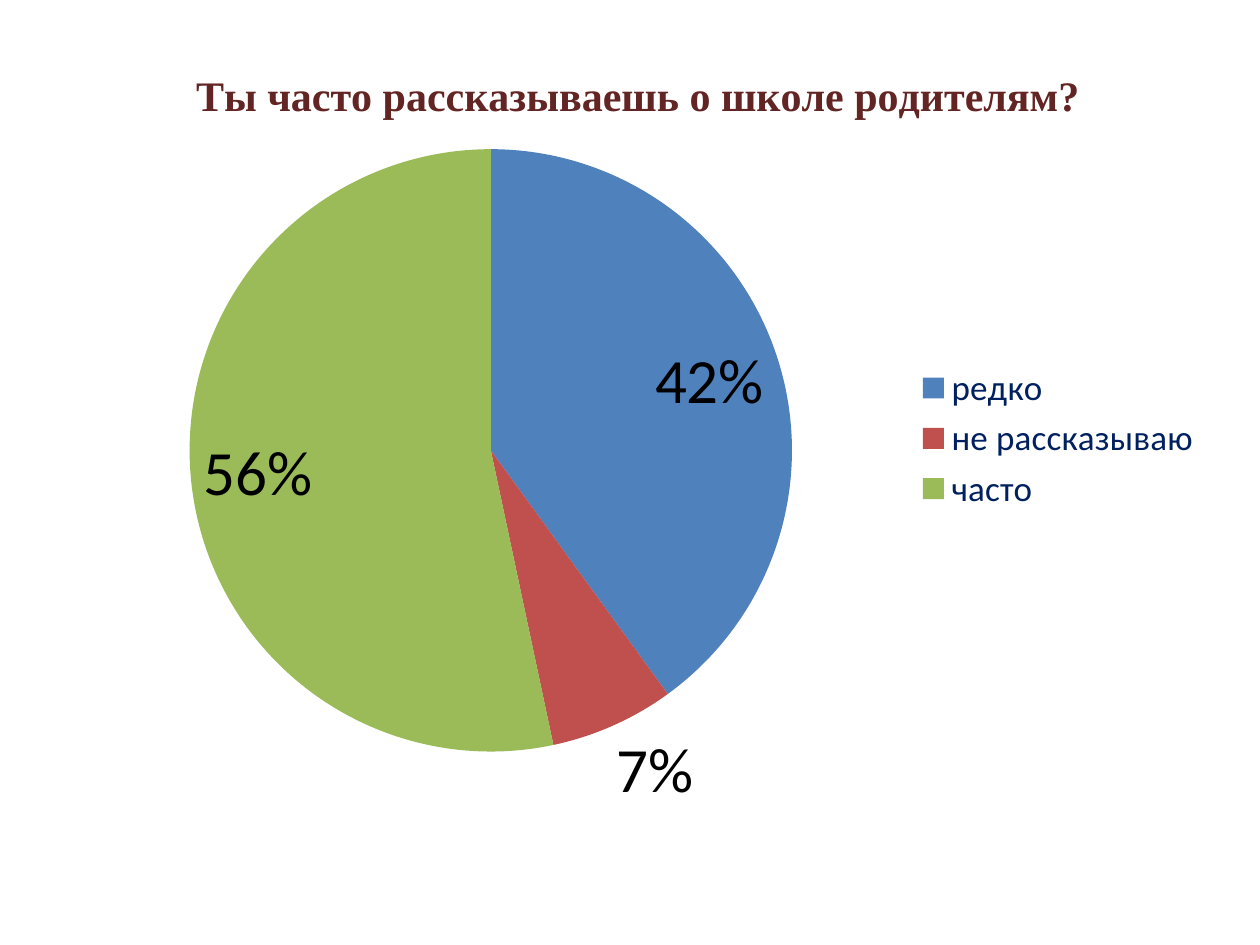
from lxml import etree
from pptx import Presentation
from pptx.chart.data import CategoryChartData
from pptx.dml.color import RGBColor
from pptx.enum.chart import XL_CHART_TYPE, XL_LABEL_POSITION, XL_LEGEND_POSITION
from pptx.oxml.ns import qn
from pptx.util import Pt

PIE = XL_CHART_TYPE.PIE
BEST_FIT = XL_LABEL_POSITION.BEST_FIT
RIGHT = XL_LEGEND_POSITION.RIGHT

TITLE = "Ты часто рассказываешь о школе родителям?"
# answer: (share, slice colour)
ANSWERS = {
    "редко": (0.42, "4F81BD"),
    "не рассказываю": (0.07, "C0504D"),
    "часто": (0.56, "9BBB59"),
}


def color(hex_str):
    return RGBColor.from_string(hex_str)


def format_font(font, hex_str, **values):
    font.color.rgb = color(hex_str)
    for name, value in values.items():
        setattr(font, name, value)


def set_layout(element, index, **values):
    """Place a chart part by fractions of the chart box."""
    old = element.find(qn("c:layout"))
    if old is not None:
        element.remove(old)
    layout = etree.Element(qn("c:layout"))
    element.insert(index, layout)
    manual = etree.SubElement(layout, qn("c:manualLayout"))
    for name, value in values.items():
        etree.SubElement(manual, qn(f"c:{name}")).set("val", str(value))


def add_answer_pie(slide, left, top, width, height):
    data = CategoryChartData(number_format="0%")
    data.categories = list(ANSWERS)
    data.add_series("Ответы", [share for share, _ in ANSWERS.values()])
    box = [Pt(v) for v in (left, top, width, height)]
    chart = slide.shapes.add_chart(PIE, *box, data).chart
    format_font(chart.font, "000000", name="Calibri", size=Pt(18))

    # Title
    chart.has_title = True
    tf = chart.chart_title.text_frame
    tf.text = TITLE
    format_font(tf.paragraphs[0].runs[0].font, "632523",
                name="Times New Roman", size=Pt(24), bold=True)
    # The layout follows the title text
    set_layout(chart.chart_title._element, 1,
               xMode="edge", yMode="edge", x=0.1, y=0.03)

    # Legend
    chart.has_legend = True
    chart.legend.position = RIGHT
    chart.legend.include_in_layout = False
    format_font(chart.legend.font, "002060", name="Calibri", size=Pt(20))

    # Slices
    plot = chart.plots[0]
    plot.vary_by_categories = True
    for i, (_, hex_str) in enumerate(ANSWERS.values()):
        fill = plot.series[0].points[i].format.fill
        fill.solid()
        fill.fore_color.rgb = color(hex_str)

    # Value labels
    plot.has_data_labels = True
    labels = plot.data_labels
    formats = {"show_value": True, "show_percentage": False,
               "number_format": "0%", "number_format_is_linked": False,
               "position": BEST_FIT}
    for name, value in formats.items():
        setattr(labels, name, value)
    format_font(labels.font, "000000", name="Calibri", size=Pt(36))

    # Pie area
    plot_area = chart._chartSpace.find(f".//{qn('c:plotArea')}")
    set_layout(plot_area, 0, layoutTarget="inner", xMode="edge", yMode="edge",
               x=0.1, y=0.14, w=0.53, h=0.75)


def main():
    prs = Presentation()
    prs.slide_width, prs.slide_height = Pt(720), Pt(540)
    s = prs.slides.add_slide(prs.slide_layouts[6])
    add_answer_pie(s, 42.5, 21, 652, 459)
    prs.save("out.pptx")


if __name__ == "__main__":
    main()
